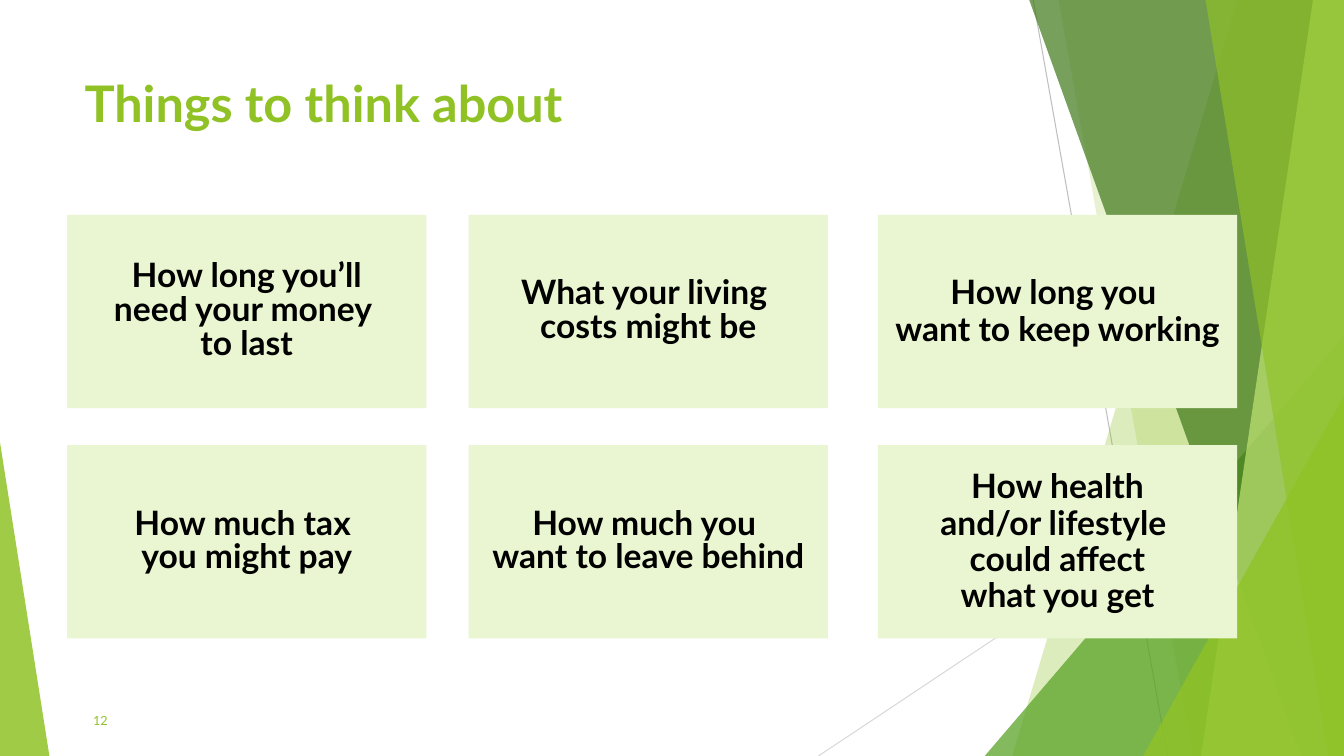
from lxml import etree
from pptx import Presentation
from pptx.dml.color import RGBColor
from pptx.enum.shapes import MSO_CONNECTOR, MSO_SHAPE
from pptx.enum.text import MSO_ANCHOR, PP_ALIGN
from pptx.oxml.ns import qn
from pptx.util import Pt

COLORS = {
    "green": "90C226", "mid_green": "54A021", "dark_green": "3F7819",
    "lime": "C0E474", "card": "EAF6D1", "text": "000000",
    "gray": "BFBFBF", "light_gray": "D9D9D9",
}
WIDTH, HEIGHT = 960, 540


def paint(shape, color, opacity=100):
    shape.shadow.inherit = False
    shape.line.fill.background()
    shape.fill.solid()
    shape.fill.fore_color.rgb = RGBColor.from_string(COLORS[color])
    if opacity < 100:
        color_element = shape._element.spPr.find(qn("a:solidFill"))[0]
        etree.SubElement(color_element, qn("a:alpha"), val=str(opacity * 1000))


def add_text(paragraph, text, size, color, bold=False):
    for index, line in enumerate(text.split("\n")):
        if index:
            paragraph.add_line_break()
        run = paragraph.add_run()
        run.text = line
        run.font.name = "Lato"
        run.font.size = Pt(size)
        run.font.bold = bold
        run.font.color.rgb = RGBColor.from_string(COLORS[color])


presentation = Presentation()
presentation.slide_width, presentation.slide_height = Pt(WIDTH), Pt(HEIGHT)
slide = presentation.slides.add_slide(presentation.slide_layouts[6])
shapes = slide.shapes

# Thin background lines
for x1, y1, x2, y2, color in [
    (738, 0, 834, HEIGHT, "gray"),
    (WIDTH, 290, 584.6, HEIGHT, "light_gray"),
]:
    line = shapes.add_connector(MSO_CONNECTOR.STRAIGHT, Pt(x1), Pt(y1), Pt(x2), Pt(y2))
    line.line.width = Pt(0.75)
    line.line.color.rgb = RGBColor.from_string(COLORS[color])
    etree.SubElement(line._element.spPr, qn("a:effectLst"))

# Translucent facets: bands (top x, bottom x) reach the right edge,
# triangles (left, top, width, apex) stand on the bottom edge
for kind, place, color, opacity in [
    ("band", (884, 723), "green", 30),
    ("band", (756, 852), "green", 20),
    ("triangle", (703.4, 240, 256.6, 1), "mid_green", 72),
    ("band", (735, 929.5), "dark_green", 70),
    ("band", (938, 858), "lime", 70),
    ("band", (861, 949), "green", 65),
    ("triangle", (816.5, 283, 143.5, 1), "green", 80),
    ("triangle", (0, 316, 35.3, 0), "green", 85),
]:
    if kind == "band":
        top_x, bottom_x = place
        outline = shapes.build_freeform(Pt(top_x), Pt(-0.6))
        outline.add_line_segments(
            [(Pt(WIDTH), Pt(-0.6)), (Pt(WIDTH), Pt(HEIGHT)), (Pt(bottom_x), Pt(HEIGHT))],
            close=True)
        facet = outline.convert_to_shape()
    else:
        left, top, width, apex = place
        facet = shapes.add_shape(MSO_SHAPE.ISOSCELES_TRIANGLE,
                                 Pt(left), Pt(top), Pt(width), Pt(HEIGHT - top))
        facet.adjustments[0] = apex
    paint(facet, color, opacity)

# Title
title = shapes.add_textbox(Pt(53.3), Pt(48), Pt(677), Pt(104))
title.text_frame.word_wrap = True
add_text(title.text_frame.paragraphs[0], "Things to think about", 36, "green", bold=True)

# Slide number
number = shapes.add_textbox(Pt(48), Pt(500.5), Pt(36), Pt(28.8))
number.text_frame.word_wrap = True
number.text_frame.vertical_anchor = MSO_ANCHOR.MIDDLE
number.text_frame.paragraphs[0].alignment = PP_ALIGN.RIGHT
add_text(number.text_frame.paragraphs[0], "12", 9, "green")

# Cards: three columns by two rows, each with its line spacing and paragraphs
cards = [
    (24, ["How long you’ll", "need your money \nto last"]),
    (24, ["What your living \ncosts might be"]),
    (26, ["How long you \nwant to keep working"]),
    (24, ["How much tax \nyou might pay"]),
    (24, ["How much you \nwant to leave behind"]),
    (26, ["How health\nand/or lifestyle \ncould affect", "what you get"]),
]
column_lefts = [48, 334.8, 627.1]
row_tops = [153.5, 318]
for index, (spacing, texts) in enumerate(cards):
    row, column = divmod(index, len(column_lefts))
    card = shapes.add_shape(MSO_SHAPE.RECTANGLE, Pt(column_lefts[column]),
                            Pt(row_tops[row]), Pt(256.5), Pt(138))
    paint(card, "card")
    frame = card.text_frame
    frame.word_wrap = False
    frame.vertical_anchor = MSO_ANCHOR.MIDDLE
    for position, text in enumerate(texts):
        paragraph = frame.add_paragraph() if position else frame.paragraphs[0]
        paragraph.alignment = PP_ALIGN.CENTER
        paragraph.line_spacing = Pt(spacing)
        add_text(paragraph, text, 24, "text", bold=True)

presentation.save("out.pptx")
